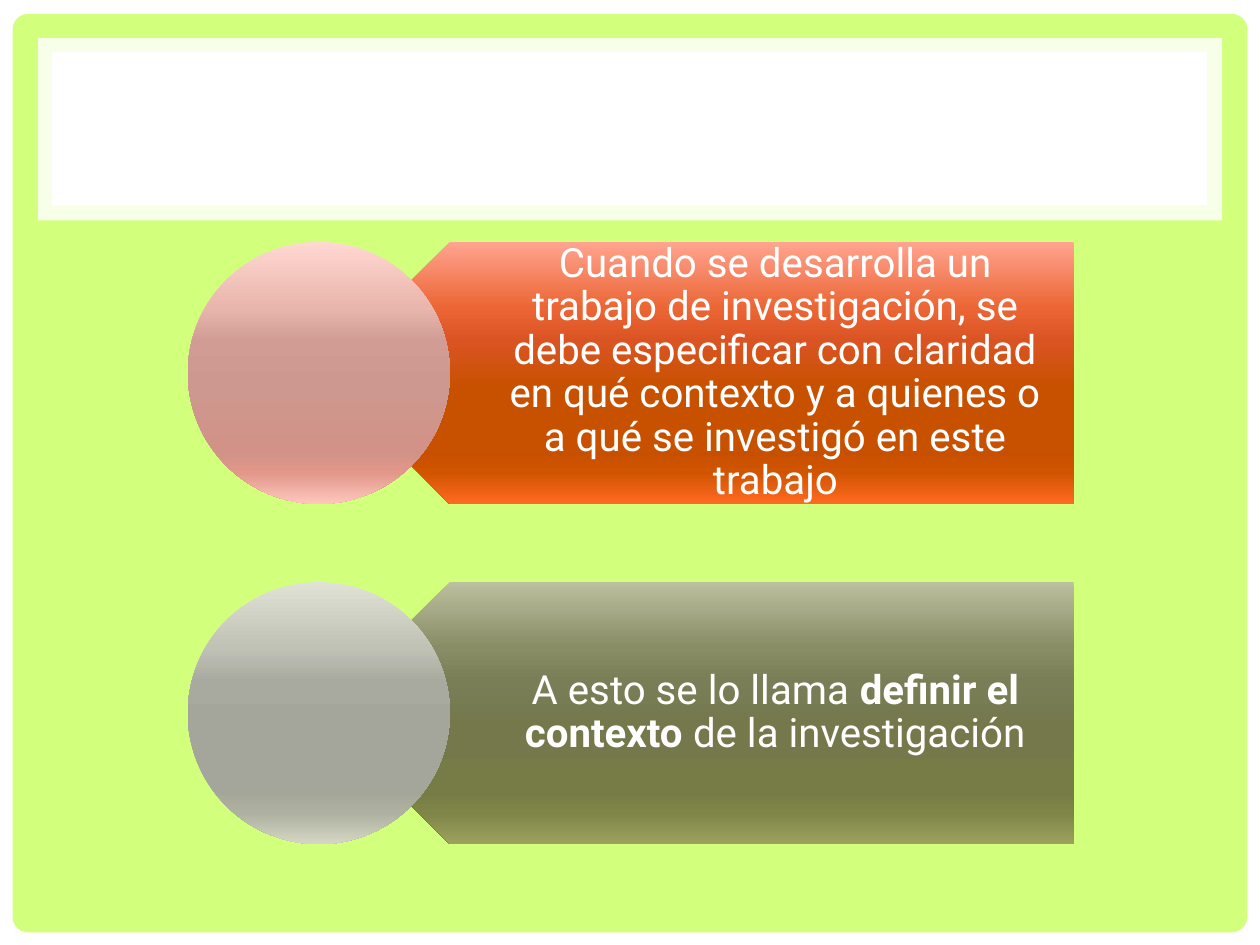
from dataclasses import dataclass
from lxml.etree import SubElement
from pptx import Presentation
from pptx.dml.color import RGBColor
from pptx.enum.shapes import MSO_SHAPE
from pptx.enum.text import MSO_ANCHOR, PP_ALIGN
from pptx.oxml.ns import qn
from pptx.shapes.autoshape import Shape
from pptx.slide import Slide
from pptx.util import Inches, Pt

COLORS = {"white": "FFFFFF", "lime": "D2FF7C"}
STOPS = (0, 25, 38, 55, 80, 88, 100)
SIDE = 2.08


@dataclass(frozen=True)
class Panel:
    kind: MSO_SHAPE
    box: tuple[float, float, float, float]
    color: str
    alpha: int = 100
    round: float | None = None


@dataclass(frozen=True)
class Idea:
    top: float
    arrow: tuple[str, ...]
    disc: tuple[str, ...]
    runs: tuple[tuple[str, bool], ...]


PANELS = (
    Panel(MSO_SHAPE.RECTANGLE, (0, 0, 10, 7.5), "white"),
    Panel(MSO_SHAPE.ROUNDED_RECTANGLE, (0.1, 0.11, 9.8, 7.29), "lime", round=0.017),
    Panel(MSO_SHAPE.RECTANGLE, (0.3, 0.3, 9.4, 1.45), "white", alpha=83),
    Panel(MSO_SHAPE.RECTANGLE, (0.41, 0.41, 9.17, 1.22), "white"),
)
IDEAS = (
    Idea(
        1.92,
        ("FFA490", "EC6635", "DA5423", "C85100", "C65000", "D15400", "FF6A22"),
        ("FFD8D1", "E9B6AD", "D09C94", "CD988F", "D29287", "E1978A", "FFC7BD"),
        (("Cuando se desarrolla un trabajo de investigación, se debe especificar "
          "con claridad en qué contexto y a quienes o a qué se investigó en este "
          "trabajo", False),),
    ),
    Idea(
        4.62,
        ("BBBF9D", "898D66", "7A7E57", "74784B", "777B46", "7F8547", "9CA25C"),
        ("E1E2D6", "C1C2B6", "A9AA9F", "A5A69B", "A5A698", "AEB0A0", "D5D7C4"),
        (("A esto se lo llama ", False), ("definir el contexto ", True),
         ("de la investigación", False)),
    ),
)


def add_shape(slide: Slide, kind: MSO_SHAPE, box: tuple[float, ...]) -> Shape:
    shape = slide.shapes.add_shape(kind, *map(Inches, box))
    shape.shadow.inherit = False
    shape.line.fill.background()
    return shape


def add_panel(slide: Slide, panel: Panel) -> None:
    shape = add_shape(slide, panel.kind, panel.box)
    if panel.round is not None:
        shape.adjustments[0] = panel.round
    shape.fill.solid()
    shape.fill.fore_color.rgb = RGBColor.from_string(COLORS[panel.color])
    if panel.alpha < 100:
        color = shape.fill._xPr.find(".//" + qn("a:srgbClr"))
        SubElement(color, qn("a:alpha"), val=str(panel.alpha * 1000))


def shade(shape: Shape, colors: tuple[str, ...]) -> None:
    shape.fill.gradient()
    shape.fill.gradient_angle = 270
    grad = shape._element.spPr.find(qn("a:gradFill"))
    grad.set("rotWithShape", "0")
    stops = grad.find(qn("a:gsLst"))
    for old in list(stops):
        stops.remove(old)
    for place, color in zip(STOPS, colors):
        stop = SubElement(stops, qn("a:gs"), pos=str(place * 1000))
        SubElement(stop, qn("a:srgbClr"), val=color)


def add_text(slide: Slide, idea: Idea) -> None:
    box = slide.shapes.add_textbox(*map(Inches, (3.05, idea.top, 5.47, SIDE)))
    frame = box.text_frame
    frame.word_wrap = True
    frame.vertical_anchor = MSO_ANCHOR.MIDDLE
    frame.margin_left, frame.margin_right = Inches(0.92), Inches(0.18)
    frame.margin_top = frame.margin_bottom = Inches(0.1)
    para = frame.paragraphs[0]
    para.alignment = PP_ALIGN.CENTER
    para.line_spacing = 0.9
    para.font.name = "Roboto"
    para.font.size = Pt(23)
    para.font.color.rgb = RGBColor.from_string(COLORS["white"])
    for text, bold in idea.runs:
        run = para.add_run()
        run.text = text
        run.font.bold = bold


def add_idea(slide: Slide, idea: Idea) -> None:
    arrow = add_shape(slide, MSO_SHAPE.PENTAGON, (2.53, idea.top, 5.99, SIDE))
    arrow.rotation = 180
    shade(arrow, idea.arrow)
    add_text(slide, idea)
    disc = add_shape(slide, MSO_SHAPE.OVAL, (1.49, idea.top, SIDE, SIDE))
    shade(disc, idea.disc)


def main() -> None:
    deck = Presentation()
    deck.slide_width, deck.slide_height = Inches(10), Inches(7.5)
    slide = deck.slides.add_slide(deck.slide_layouts[6])
    back = slide.background.fill
    back.solid()
    back.fore_color.rgb = RGBColor.from_string(COLORS["lime"])
    for panel in PANELS:
        add_panel(slide, panel)
    for idea in IDEAS:
        add_idea(slide, idea)
    deck.save("out.pptx")


if __name__ == "__main__":
    main()
